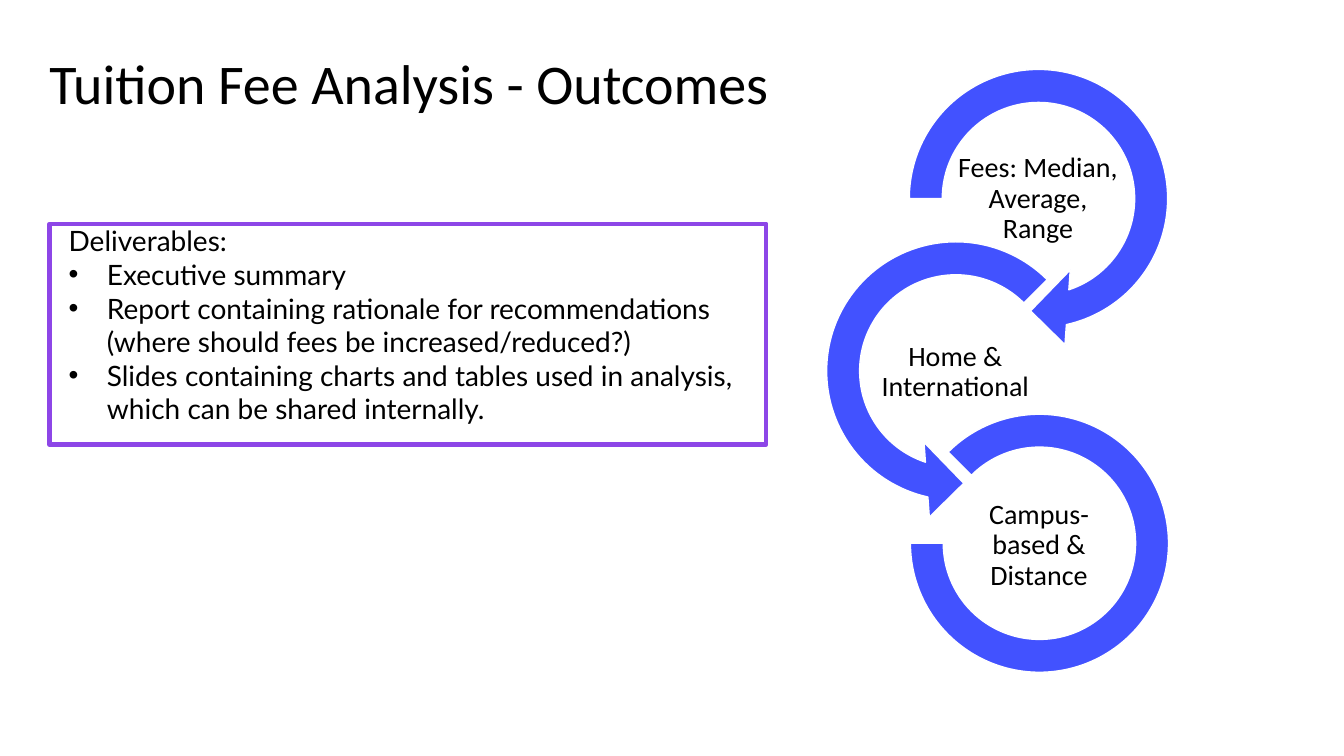
import pptx
import pptx.dml.color
import pptx.enum.shapes
import pptx.enum.text
import pptx.oxml
import pptx.util
import lxml.etree

PX = 9144  # EMU in one px, 100 px to the inch
BLACK, BLUE, PURPLE, WHITE = "000000", "4252FF", "8D46E7", "FFFFFF"
Shape = pptx.enum.shapes.MSO_SHAPE
Align = pptx.enum.text.PP_ALIGN
Anchor = pptx.enum.text.MSO_ANCHOR


def color(hex_code):
    return pptx.dml.color.RGBColor.from_string(hex_code)


def write(para, text, font, size):
    span = para.add_run()
    span.text = text
    span.font.name = font
    span.font.size = pptx.util.Pt(size)
    span.font.color.rgb = color(BLACK)


deck = pptx.Presentation()
deck.slide_width, deck.slide_height = 1333 * PX, 750 * PX
page = deck.slides.add_slide(deck.slide_layouts[6])

# Chain of three rings: preset, left, top, size, adjustments, label and its place
rings = [
    (Shape.CIRCULAR_ARROW, 881, 48, 298, [0.1098, 11.423, 45, 108, 0.125],
     "Fees: Median, Average, Range", 947, 156),
    (Shape.LEFT_CIRCULAR_ARROW, 799, 219, 298, [0.1098, 11.423, 63, 189, 0.125],
     "Home & International", 865, 328),
    (Shape.BLOCK_ARC, 903, 411, 256, [135, 108, 0.1274],
     "Campus-based & Distance", 948, 500),
]
for preset, left, top, size, adjustments, label, label_left, label_top in rings:
    ring = page.shapes.add_shape(preset, left * PX, top * PX, size * PX, size * PX)
    for index, value in enumerate(adjustments):
        ring.adjustments[index] = value
    ring.shadow.inherit = False
    ring.fill.solid()
    ring.fill.fore_color.rgb = color(BLUE)
    ring.line.color.rgb = color(WHITE)
    ring.line.width = pptx.util.Pt(1)

    box = page.shapes.add_textbox(label_left * PX, label_top * PX, 165 * PX, 83 * PX)
    frame = box.text_frame
    frame.word_wrap = True
    frame.vertical_anchor = Anchor.MIDDLE
    frame.margin_left = frame.margin_right = frame.margin_top = frame.margin_bottom = PX
    para = frame.paragraphs[0]
    para.alignment = Align.CENTER
    para.line_spacing = 0.9
    write(para, label, "Calibri", 20)

# Title
title = page.shapes.add_textbox(49 * PX, 48 * PX, 1028 * PX, 67 * PX)
frame = title.text_frame
frame.word_wrap = True
frame.margin_left = frame.margin_right = frame.margin_top = frame.margin_bottom = 0
write(frame.paragraphs[0], "Tuition Fee Analysis - Outcomes", "Calibri", 40)

# Framed list of deliverables
panel = page.shapes.add_shape(Shape.RECTANGLE, 49 * PX, 222 * PX, 711 * PX, 219 * PX)
panel.shadow.inherit = False
panel.fill.background()
panel.line.color.rgb = color(PURPLE)
panel.line.width = pptx.util.Pt(3)
frame = panel.text_frame
frame.word_wrap = True
frame.vertical_anchor = Anchor.TOP
frame.margin_left = frame.margin_right = frame.margin_top = frame.margin_bottom = 0

heading = frame.paragraphs[0]
heading.alignment = Align.LEFT
heading._p.get_or_add_pPr().set("marL", str(19 * PX))
write(heading, "Deliverables:", "Lato", 20)

deliverables = [
    "Executive summary",
    "Report containing rationale for recommendations (where should fees be increased/reduced?)",
    "Slides containing charts and tables used in analysis, which can be shared internally.",
]
for deliverable in deliverables:
    para = frame.add_paragraph()
    para.alignment = Align.LEFT
    settings = para._p.get_or_add_pPr()
    settings.set("marL", str(57 * PX))
    settings.set("indent", str(-38 * PX))
    for tag, name, value in [("a:buFont", "typeface", "Arial"), ("a:buChar", "char", "•")]:
        lxml.etree.SubElement(settings, pptx.oxml.ns.qn(tag)).set(name, value)
    write(para, deliverable, "Lato", 20)

deck.save("out.pptx")
